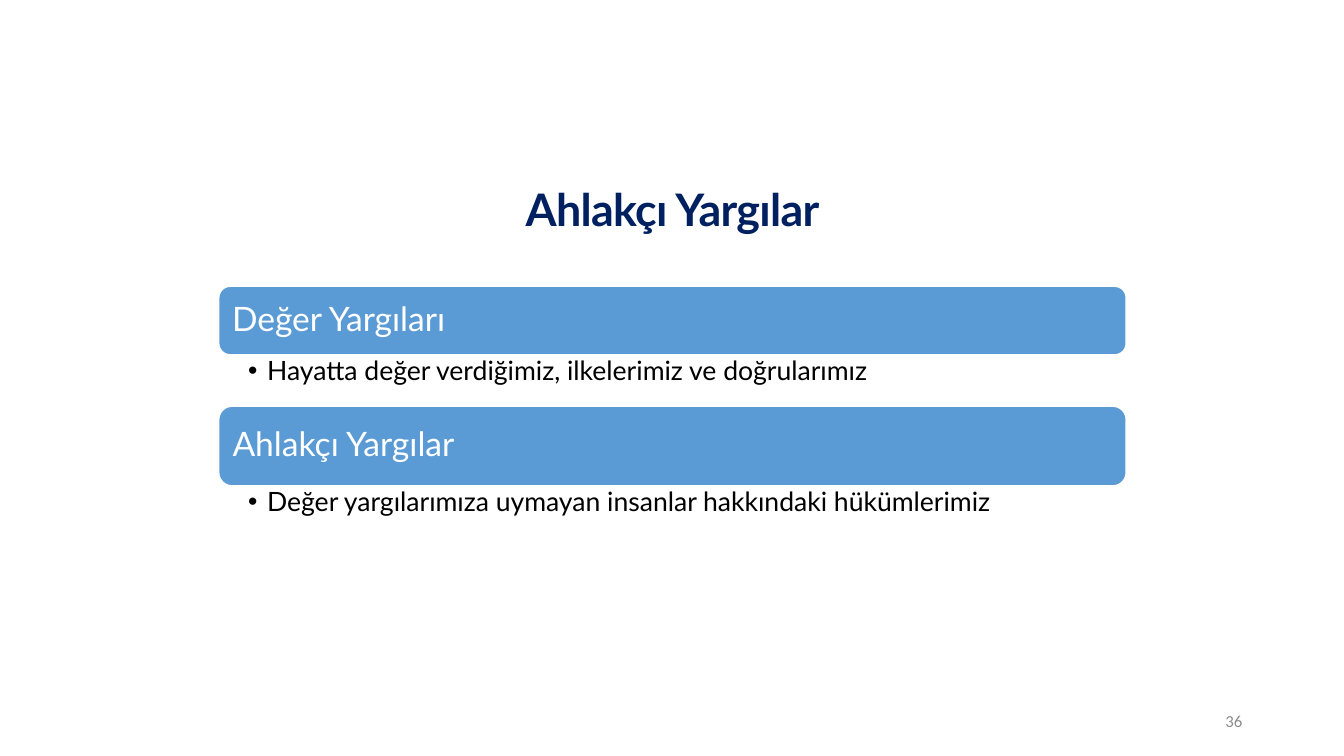
from dataclasses import dataclass

from lxml.etree import SubElement
from pptx import Presentation
from pptx.dml.color import RGBColor
from pptx.enum.shapes import MSO_SHAPE
from pptx.enum.text import MSO_ANCHOR, PP_ALIGN
from pptx.oxml.ns import qn
from pptx.shapes.autoshape import Shape
from pptx.slide import Slide
from pptx.util import Inches, Pt


@dataclass(frozen=True)
class Theme:
    navy: str = "002060"
    blue: str = "5B9BD5"
    white: str = "FFFFFF"
    black: str = "000000"
    gray: str = "8C8C8C"
    font: str = "Lato"
    page_font: str = "Calibri"
    title_size: int = 32
    bar_size: int = 24
    note_size: int = 19
    page_size: int = 12


@dataclass(frozen=True)
class Box:
    left: float
    top: float
    width: float
    height: float


@dataclass(frozen=True)
class Style:
    size: int
    color: str
    font: str = "Lato"
    bold: bool = False
    align: PP_ALIGN = PP_ALIGN.LEFT
    anchor: MSO_ANCHOR = MSO_ANCHOR.MIDDLE
    spacing: float = 0.9
    insets: tuple[float, float, float, float] = (0.1, 0.05, 0.1, 0.05)


@dataclass(frozen=True)
class Section:
    head: str
    note: str
    top: float
    bar_height: float
    note_height: float


THEME = Theme()
TITLE = Style(THEME.title_size, THEME.navy, THEME.font, True, PP_ALIGN.CENTER)
BAR = Style(THEME.bar_size, THEME.white, THEME.font, insets=(0.1, 0.1, 0.1, 0.1))
NOTE = Style(THEME.note_size, THEME.black, THEME.font,
             anchor=MSO_ANCHOR.TOP, insets=(0.29, 0.03, 0.19, 0.03))
PAGE = Style(THEME.page_size, THEME.gray, THEME.page_font,
             align=PP_ALIGN.RIGHT, spacing=1.0)

LEFT, WIDTH = 2.17, 9
SECTIONS = [
    Section("Değer Yargıları",
            "Hayatta değer verdiğimiz, ilkelerimiz ve doğrularımız",
            2.84, 0.68, 0.51),
    Section("Ahlakçı Yargılar",
            "Değer yargılarımıza uymayan insanlar hakkındaki hükümlerimiz",
            4.03, 0.79, 0.82),
]


def lengths(box: Box) -> list[int]:
    return [Inches(n) for n in (box.left, box.top, box.width, box.height)]


def write(shape: Shape, text: str, style: Style) -> None:
    frame = shape.text_frame
    frame.text = text
    frame.word_wrap = True
    frame.vertical_anchor = style.anchor
    (frame.margin_left, frame.margin_top,
     frame.margin_right, frame.margin_bottom) = map(Inches, style.insets)
    para = frame.paragraphs[0]
    para.alignment = style.align
    para.line_spacing = style.spacing
    font = para.runs[0].font
    font.name = style.font
    font.size = Pt(style.size)
    font.bold = style.bold
    font.color.rgb = RGBColor.from_string(style.color)


def add_text(slide: Slide, box: Box, text: str, style: Style) -> Shape:
    shape = slide.shapes.add_textbox(*lengths(box))
    write(shape, text, style)
    return shape


def add_bar(slide: Slide, box: Box, text: str) -> None:
    bar = slide.shapes.add_shape(MSO_SHAPE.ROUNDED_RECTANGLE, *lengths(box))
    bar.shadow.inherit = False
    bar.fill.solid()
    bar.fill.fore_color.rgb = RGBColor.from_string(THEME.blue)
    bar.line.color.rgb = RGBColor.from_string(THEME.white)
    bar.line.width = Pt(1)
    write(bar, text, BAR)


def add_bullet(shape: Shape) -> None:
    props = shape.text_frame.paragraphs[0]._p.get_or_add_pPr()
    indent = Inches(0.19)
    props.set("marL", str(indent))
    props.set("indent", str(-indent))
    SubElement(props, qn("a:buFont"), typeface="Arial")
    SubElement(props, qn("a:buChar"), char="•")


def add_section(slide: Slide, part: Section) -> None:
    add_bar(slide, Box(LEFT, part.top, WIDTH, part.bar_height), part.head)
    below = Box(LEFT, part.top + part.bar_height, WIDTH, part.note_height)
    add_bullet(add_text(slide, below, part.note, NOTE))


def main() -> None:
    deck = Presentation()
    deck.slide_width, deck.slide_height = Inches(13.33), Inches(7.5)
    slide = deck.slides.add_slide(deck.slide_layouts[6])
    title = add_text(slide, Box(0.92, 1.38, 11.5, 1.45), "Ahlakçı Yargılar", TITLE)
    # Letter spacing is in hundredths of a point
    title.text_frame.paragraphs[0].runs[0]._r.get_or_add_rPr().set("spc", "-50")
    for part in SECTIONS:
        add_section(slide, part)
    add_text(slide, Box(9.42, 6.95, 3, 0.4), "36", PAGE)
    deck.save("out.pptx")


if __name__ == "__main__":
    main()
